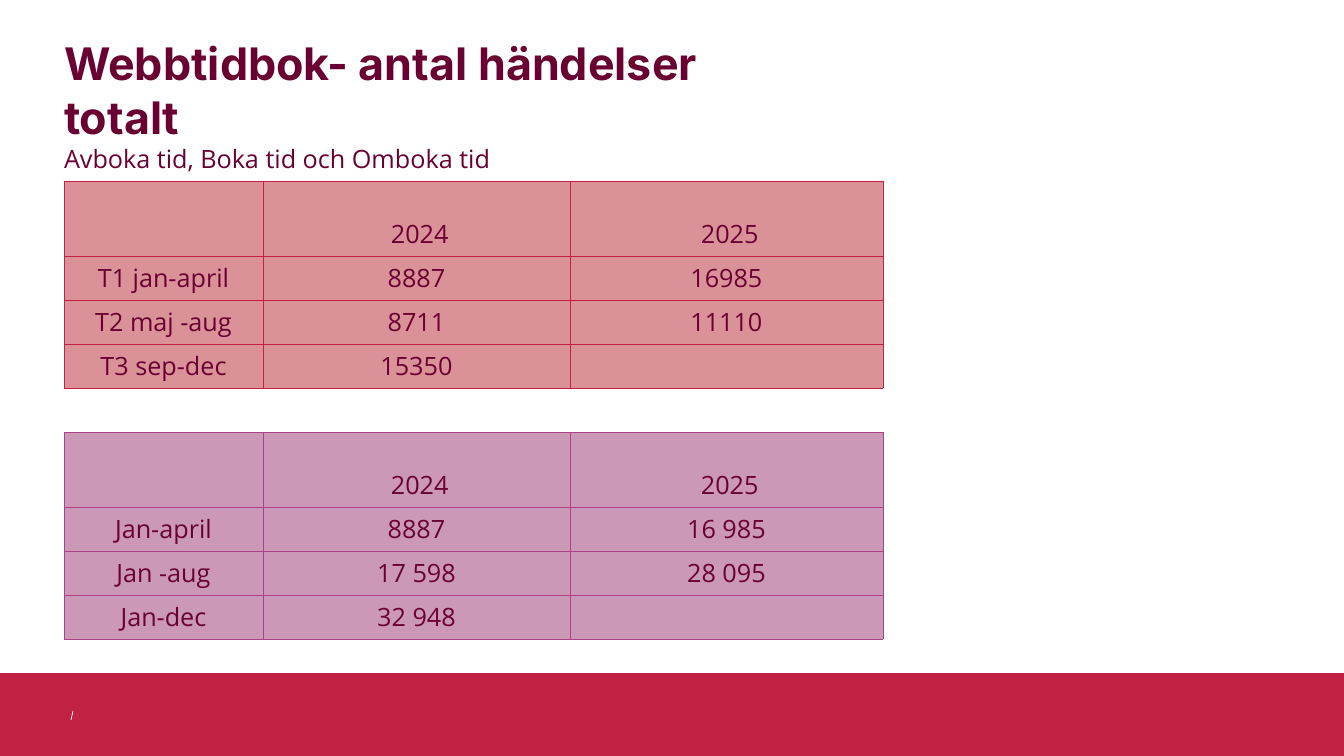
from lxml.etree import SubElement
from pptx import Presentation
from pptx.dml.color import RGBColor
from pptx.enum.shapes import MSO_CONNECTOR, MSO_SHAPE
from pptx.enum.text import MSO_ANCHOR, MSO_AUTO_SIZE, PP_ALIGN
from pptx.oxml.ns import qn
from pptx.util import Emu, Pt

COLORS = {
    "text": "6A0032",
    "red": "C12143",
    "red_tint": "DA9197",
    "purple": "A9428B",
    "purple_tint": "CB98B7",
    "white": "FFFFFF",
}
HEADING_FONT, BODY_FONT = "Inter", "Open Sans"
COLUMN_WIDTHS = [199, 307, 313]
ROW_HEIGHTS = [75, 44, 44, 44]
YEARS = ["", " 2024", " 2025"]
PERIOD_ROWS = [
    YEARS,
    ["T1 jan-april", "8887", "16985"],
    ["T2 maj -aug", "8711", "11110"],
    ["T3 sep-dec", "15350", ""],
]
CUMULATIVE_ROWS = [
    YEARS,
    ["Jan-april", "8887", "16 985"],
    ["Jan -aug", "17 598", "28 095"],
    ["Jan-dec", "32 948", ""],
]


def px(length):
    return Emu(round(length * 914400 / 100.8))


def color(name):
    return RGBColor.from_string(COLORS[name])


def style_font(font, name, size, bold=False):
    font.name = name
    font.size = Pt(size)
    font.bold = bold
    font.color.rgb = color("text")


def add_footer(page, left, top, width, height):
    # Coloured band
    band = page.shapes.add_shape(
        MSO_SHAPE.RECTANGLE, px(left), px(top), px(width), px(height))
    band.shadow.inherit = False
    band.fill.solid()
    band.fill.fore_color.rgb = color("red")
    band.line.fill.background()

    # Small slanted separator
    slash = page.shapes.add_connector(
        MSO_CONNECTOR.STRAIGHT,
        px(left + 73), px(top + 38), px(left + 71), px(top + 47))
    slash.line.color.rgb = color("white")
    slash.line.width = Pt(0.5)
    SubElement(slash.element.spPr, qn("a:effectLst"))


def add_heading(page, left, top, width, height):
    title = page.shapes.title
    title.left, title.top = px(left), px(top)
    title.width, title.height = px(width), px(height)
    frame = title.text_frame
    frame.word_wrap = True
    frame.auto_size = MSO_AUTO_SIZE.NONE
    frame.vertical_anchor = MSO_ANCHOR.TOP
    frame.margin_left = frame.margin_right = 0
    frame.margin_top = frame.margin_bottom = 0

    lines = [
        ("Webbtidbok- antal händelser totalt", HEADING_FONT, 32, True),
        ("Avboka tid, Boka tid och Omboka tid", BODY_FONT, 18, False),
    ]
    for index, (text, name, size, bold) in enumerate(lines):
        para = frame.add_paragraph() if index else frame.paragraphs[0]
        para.alignment = PP_ALIGN.LEFT
        span = para.add_run()
        span.text = text
        style_font(span.font, name, size, bold)


def add_borders(cell, line_color):
    properties = cell._tc.get_or_add_tcPr()
    # Borders come before the fill in the cell properties
    for index, side in enumerate(["lnL", "lnR", "lnT", "lnB"]):
        line = SubElement(properties, qn(f"a:{side}"), w=str(Pt(0.5)))
        fill = SubElement(line, qn("a:solidFill"))
        SubElement(fill, qn("a:srgbClr"), val=COLORS[line_color])
        properties.insert(index, line)


def fill_cell(cell, text, fill_color, line_color):
    cell.margin_left = cell.margin_right = cell.margin_top = px(1)
    cell.margin_bottom = px(5)
    cell.vertical_anchor = MSO_ANCHOR.BOTTOM
    cell.fill.solid()
    cell.fill.fore_color.rgb = color(fill_color)
    add_borders(cell, line_color)
    para = cell.text_frame.paragraphs[0]
    para.alignment = PP_ALIGN.CENTER
    style_font(para.font, BODY_FONT, 18)
    if text:
        span = para.add_run()
        span.text = text
        style_font(span.font, BODY_FONT, 18)


def add_event_table(page, left, top, rows, fill_color, line_color):
    table = page.shapes.add_table(
        len(rows), len(COLUMN_WIDTHS), px(left), px(top),
        px(sum(COLUMN_WIDTHS)), px(sum(ROW_HEIGHTS))).table
    table.first_row = table.horz_banding = False
    for column, width in zip(table.columns, COLUMN_WIDTHS):
        column.width = px(width)
    for row, height, texts in zip(table.rows, ROW_HEIGHTS, rows):
        row.height = px(height)
        for cell, text in zip(row.cells, texts):
            fill_cell(cell, text, fill_color, line_color)


def main():
    deck = Presentation()
    deck.slide_width, deck.slide_height = px(1344), px(756)
    page = deck.slides.add_slide(deck.slide_layouts.get_by_name("Title Only"))
    add_footer(page, 0, 673, 1344, 83)
    add_heading(page, 64, 36, 741, 100)
    add_event_table(page, 64, 181, PERIOD_ROWS, "red_tint", "red")
    add_event_table(page, 64, 432, CUMULATIVE_ROWS, "purple_tint", "purple")
    deck.save("out.pptx")


if __name__ == "__main__":
    main()
